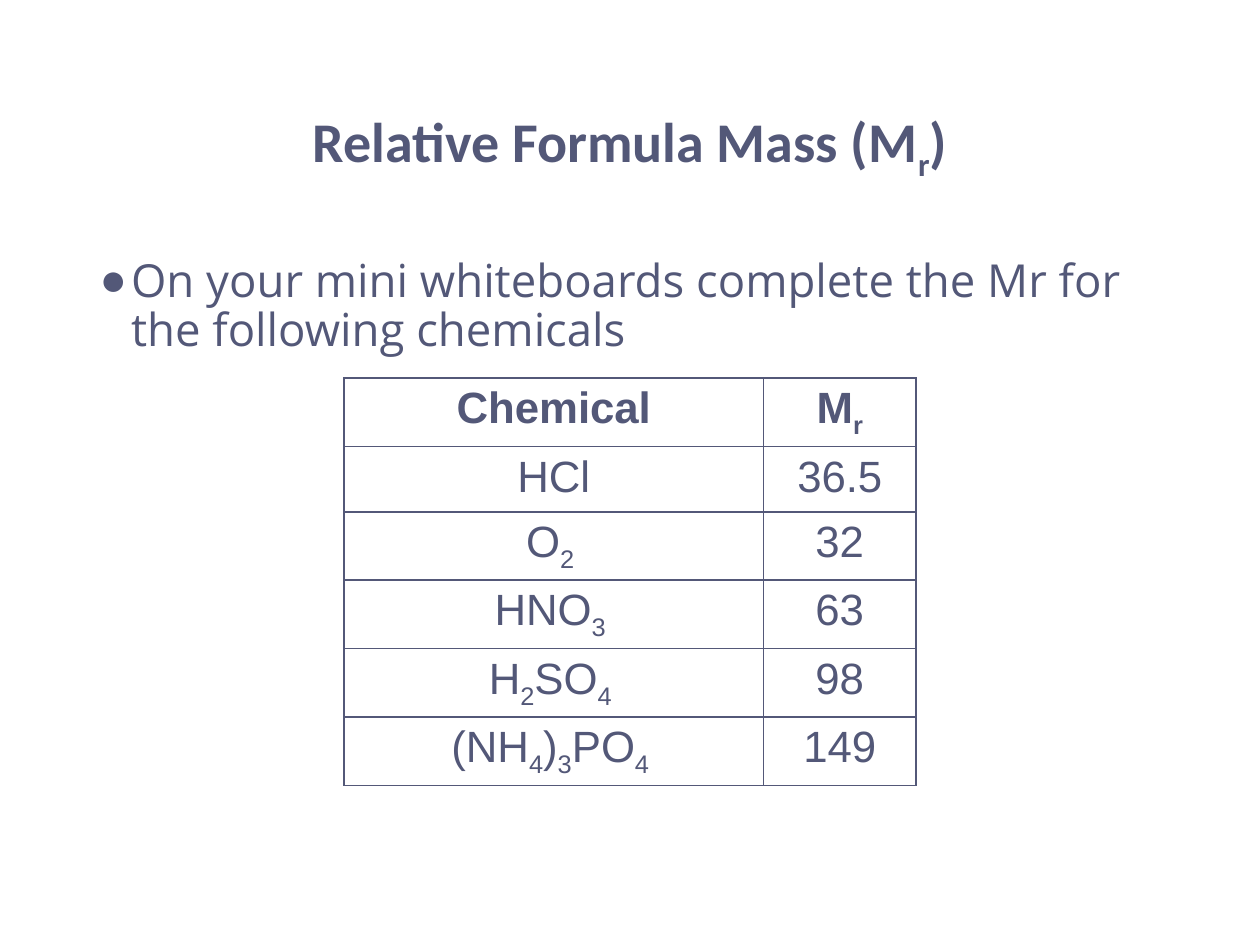
from typing import NamedTuple

from lxml.etree import SubElement
from pptx import Presentation
from pptx.dml.color import RGBColor
from pptx.enum.text import MSO_ANCHOR, MSO_AUTO_SIZE, PP_ALIGN
from pptx.oxml.ns import qn
from pptx.util import Inches, Pt

INK = "535878"
SIDE_MARGIN = 0.69
CONTENT_WIDTH = 10 - 2 * SIDE_MARGIN
ROW_HEIGHT = 0.52
COLUMN_WIDTHS = (3.33, 1.21)


class Style(NamedTuple):
    font: str
    size: float
    bold: bool = False


class Chemical(NamedTuple):
    formula: str
    mass: str


TITLE = Style("Calibri", 32, True)
TASK = Style("Open Sans", 26)
HEADER = Style("Arial", 25, True)
ENTRY = Style("Arial", 25)

# Text between underscores is subscript.
CHEMICALS = [
    Chemical("HCl", "36.5"),
    Chemical("O_2 _", "32"),
    Chemical("HNO_3 _", "63"),
    Chemical("H_2_SO_4 _", "98"),
    Chemical("(NH_4_)_3_PO_4 _", "149"),
]


def color(value: str) -> RGBColor:
    return RGBColor.from_string(value)


def write(paragraph, marked: str, style: Style, align: PP_ALIGN) -> None:
    """Write text whose parts between underscores are subscript."""
    paragraph.alignment = align
    font = paragraph.font
    font.name, font.size, font.bold = style.font, Pt(style.size), style.bold
    font.color.rgb = color(INK)
    for index, part in enumerate(marked.split("_")):
        if part:
            run = paragraph.add_run()
            run.text = part
            if index % 2:
                run._r.get_or_add_rPr().set("baseline", "-25000")


def place(holder, top: float, height: float, anchor: MSO_ANCHOR):
    """Move a placeholder and return its first paragraph."""
    holder.left, holder.top = Inches(SIDE_MARGIN), Inches(top)
    holder.width, holder.height = Inches(CONTENT_WIDTH), Inches(height)
    frame = holder.text_frame
    frame.auto_size = MSO_AUTO_SIZE.NONE
    frame.vertical_anchor = anchor
    paragraph = frame.paragraphs[0]
    paragraph.line_spacing = 0.9
    paragraph.space_before = Pt(0)
    return paragraph


def add_bullet(paragraph, character: str, indent: float) -> None:
    properties = paragraph._p.get_or_add_pPr()
    properties.set("marL", str(Inches(indent)))
    properties.set("indent", str(-Inches(indent)))
    bullet_color = SubElement(properties, qn("a:buClr"))
    SubElement(bullet_color, qn("a:srgbClr"), val=INK)
    SubElement(properties, qn("a:buChar"), char=character)


def outline(cell, width: float) -> None:
    properties = cell._tc.get_or_add_tcPr()
    for side in ("a:lnL", "a:lnR", "a:lnT", "a:lnB"):
        line = SubElement(properties, qn(side), w=str(Pt(width)))
        fill = SubElement(line, qn("a:solidFill"))
        SubElement(fill, qn("a:srgbClr"), val=INK)


def add_mass_table(slide, left: float, top: float) -> None:
    rows = [Chemical("Chemical", "M_r_"), *CHEMICALS]
    table = slide.shapes.add_table(
        len(rows), len(COLUMN_WIDTHS), Inches(left), Inches(top),
        Inches(sum(COLUMN_WIDTHS)), Inches(ROW_HEIGHT * len(rows)),
    ).table
    table.first_row = table.horz_banding = False
    for column, width in zip(table.columns, COLUMN_WIDTHS):
        column.width = Inches(width)
    for row_index, row in enumerate(rows):
        for column_index, entry in enumerate(row):
            cell = table.cell(row_index, column_index)
            outline(cell, 1)
            cell.fill.background()
            style = ENTRY if row_index else HEADER
            write(cell.text_frame.paragraphs[0], entry, style, PP_ALIGN.CENTER)


def main() -> None:
    deck = Presentation()
    deck.slide_width, deck.slide_height = Inches(10), Inches(7.5)
    slide = deck.slides.add_slide(deck.slide_layouts[1])

    heading = place(slide.shapes.title, 0.4, 1.45, MSO_ANCHOR.MIDDLE)
    write(heading, "Relative Formula Mass (M_r_)", TITLE, PP_ALIGN.CENTER)

    task = place(slide.placeholders[1], 2, 4.76, MSO_ANCHOR.TOP)
    add_bullet(task, "●", 0.25)
    write(task, "On your mini whiteboards complete the Mr for the following chemicals",
          TASK, PP_ALIGN.LEFT)

    add_mass_table(slide, 2.73, 3)
    deck.save("out.pptx")


if __name__ == "__main__":
    main()
